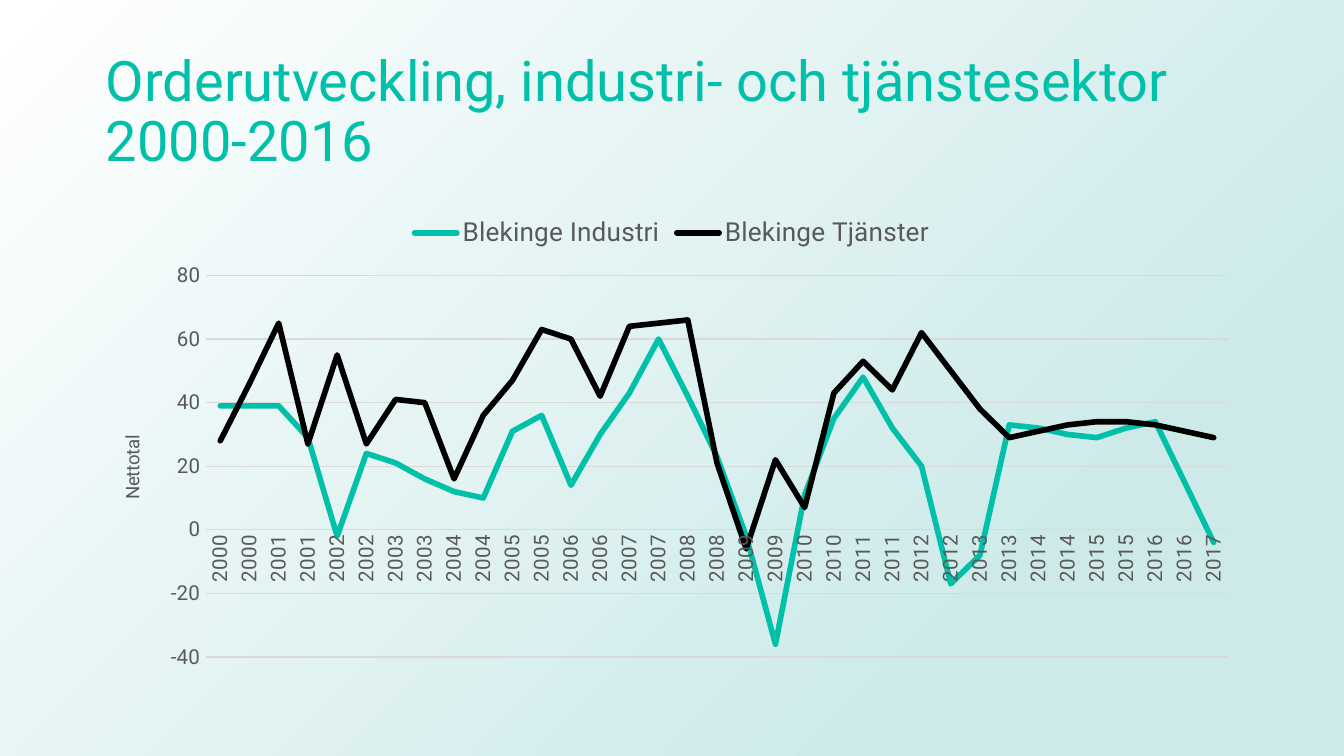
from lxml import etree
from pptx import Presentation
from pptx import util as u
from pptx.chart.data import CategoryChartData
from pptx.dml.color import RGBColor
from pptx.enum import chart as charts, shapes, text
from pptx.oxml import parse_xml
from pptx.oxml.ns import nsdecls, qn

TITLE = "Orderutveckling, industri- och tjänstesektor 2000-2016"
AXIS_TITLE = "Nettotal"
FONT = "Roboto"
TEAL = RGBColor(0x00, 0xC0, 0xA9)
BLACK = RGBColor(0x00, 0x00, 0x00)
GREY = RGBColor(0x59, 0x59, 0x59)
GRID = RGBColor(0xD9, 0xD9, 0xD9)
MIST = RGBColor(0xCD, 0xEA, 0xE9)
WHITE = RGBColor(0xFF, 0xFF, 0xFF)

# Two surveys a year, the last one in early 2017
YEARS = [str(2000 + half // 2) for half in range(35)]
SERIES = [
    ("Blekinge Industri", TEAL,
     [39, 39, 39, 29, -2, 24, 21, 16, 12, 10, 31, 36, 14, 30, 43, 60, 42, 23,
      -2, -36, 11, 35, 48, 32, 20, -17, -8, 33, 32, 30, 29, 32, 34, 15, -4]),
    ("Blekinge Tjänster", BLACK,
     [28, 46, 65, 27, 55, 27, 41, 40, 16, 36, 47, 63, 60, 42, 64, 65, 66, 21,
      -6, 22, 7, 43, 53, 44, 62, 50, 38, 29, 31, 33, 34, 34, 33, 31, 29]),
]
CHART_WIDTH, CHART_HEIGHT = 8.62, 3.56


def set_font(font, size, color):
    font.name, font.size, font.bold = FONT, u.Pt(size), False
    font.color.rgb = color


def set_line(line, color, width):
    line.color.rgb = color
    line.width = u.Pt(width)


def place(parent, before, x, y, w=None, h=None):
    """Place a chart part by inches from the chart's top left corner."""
    for old in parent.findall(qn("c:layout")):
        parent.remove(old)
    settings = {"layoutTarget": "inner"} if w else {}
    settings.update(xMode="edge", yMode="edge", x=x / CHART_WIDTH, y=y / CHART_HEIGHT)
    if w:
        settings.update(w=w / CHART_WIDTH, h=h / CHART_HEIGHT)
    children = "".join(f'<c:{name} val="{value}"/>' for name, value in settings.items())
    layout = parse_xml(f'<c:layout {nsdecls("c")}><c:manualLayout>{children}'
                       '</c:manualLayout></c:layout>')
    parent.find(qn(before)).addprevious(layout)


# Widescreen slide, 16:9
presentation = Presentation()
presentation.slide_width = u.Inches(10)
presentation.slide_height = u.Inches(10) * 9 // 16
slide = presentation.slides.add_slide(presentation.slide_layouts[6])

# Background: radial gradient from the bottom right corner
background = slide.shapes.add_shape(
    shapes.MSO_SHAPE.RECTANGLE, 0, 0,
    presentation.slide_width, presentation.slide_height)
background.shadow.inherit = False
background.line.fill.background()
background.fill.gradient()
for stop, position, color in zip(background.fill.gradient_stops, (0.23, 1), (MIST, WHITE)):
    stop.position = position
    stop.color.rgb = color
linear = background.fill._xPr.find(qn("a:gradFill")).find(qn("a:lin"))
radial = parse_xml(f'<a:path {nsdecls("a")} path="circle">'
                   '<a:fillToRect l="100000" t="100000"/></a:path>')
linear.addprevious(radial)
linear.getparent().remove(linear)
radial.addnext(etree.Element(qn("a:tileRect"), r="-100000", b="-100000"))

# Title
title = slide.shapes.add_textbox(
    u.Inches(0.69), u.Inches(0.3), u.Inches(8.62), u.Inches(1.09))
title.text_frame.word_wrap = True
title.text_frame.vertical_anchor = text.MSO_ANCHOR.MIDDLE
paragraph = title.text_frame.paragraphs[0]
paragraph.text = TITLE
paragraph.line_spacing = 0.9
set_font(paragraph.font, 30, TEAL)

# Line chart
data = CategoryChartData(number_format="0")
data.categories = YEARS
for name, _, values in SERIES:
    data.add_series(name, values)
chart = slide.shapes.add_chart(
    charts.XL_CHART_TYPE.LINE, u.Inches(0.69), u.Inches(1.5),
    u.Inches(CHART_WIDTH), u.Inches(CHART_HEIGHT), data).chart
set_font(chart.font, 10, BLACK)
chart.has_title = False
plot = chart.plots[0]
plot.vary_by_categories = False
for series, (_, color, _) in zip(plot.series, SERIES):
    series.smooth = False
    series.marker.style = charts.XL_MARKER_STYLE.NONE
    set_line(series.format.line, color, 3)
    outline = series._element.find(qn("c:spPr")).find(qn("a:ln"))
    outline.set("cap", "rnd")
    etree.SubElement(outline, qn("a:round"))

# Legend
chart.has_legend = True
chart.legend.position = charts.XL_LEGEND_POSITION.TOP
chart.legend.include_in_layout = False
set_font(chart.legend.font, 14, GREY)

# Axes
years, totals = chart.category_axis, chart.value_axis
for axis in (years, totals):
    axis.major_tick_mark = axis.minor_tick_mark = charts.XL_TICK_MARK.NONE
    set_font(axis.tick_labels.font, 11, GREY)
set_line(years.format.line, GRID, 0.75)
labels = years._element.find(qn("c:txPr")).find(qn("a:bodyPr"))
labels.set("rot", "-5400000")
labels.set("vert", "horz")

totals.minimum_scale, totals.maximum_scale, totals.major_unit = -40, 80, 20
totals.tick_labels.number_format = "0"
totals.tick_labels.number_format_is_linked = False
totals.format.line.fill.background()
set_line(totals.major_gridlines.format.line, GRID, 0.75)
caption = totals.axis_title.text_frame
caption.text = AXIS_TITLE
set_font(caption.paragraphs[0].font, 10, GREY)
caption._txBody.find(qn("a:bodyPr")).set("rot", "-5400000")

# Positions of the axis title and the plot
place(totals.axis_title._element, "c:overlay", 0.18, 1.71)
place(plot._element.getparent(), "c:lineChart", 0.84, 0.55, 7.61, 2.84)

presentation.save("out.pptx")
